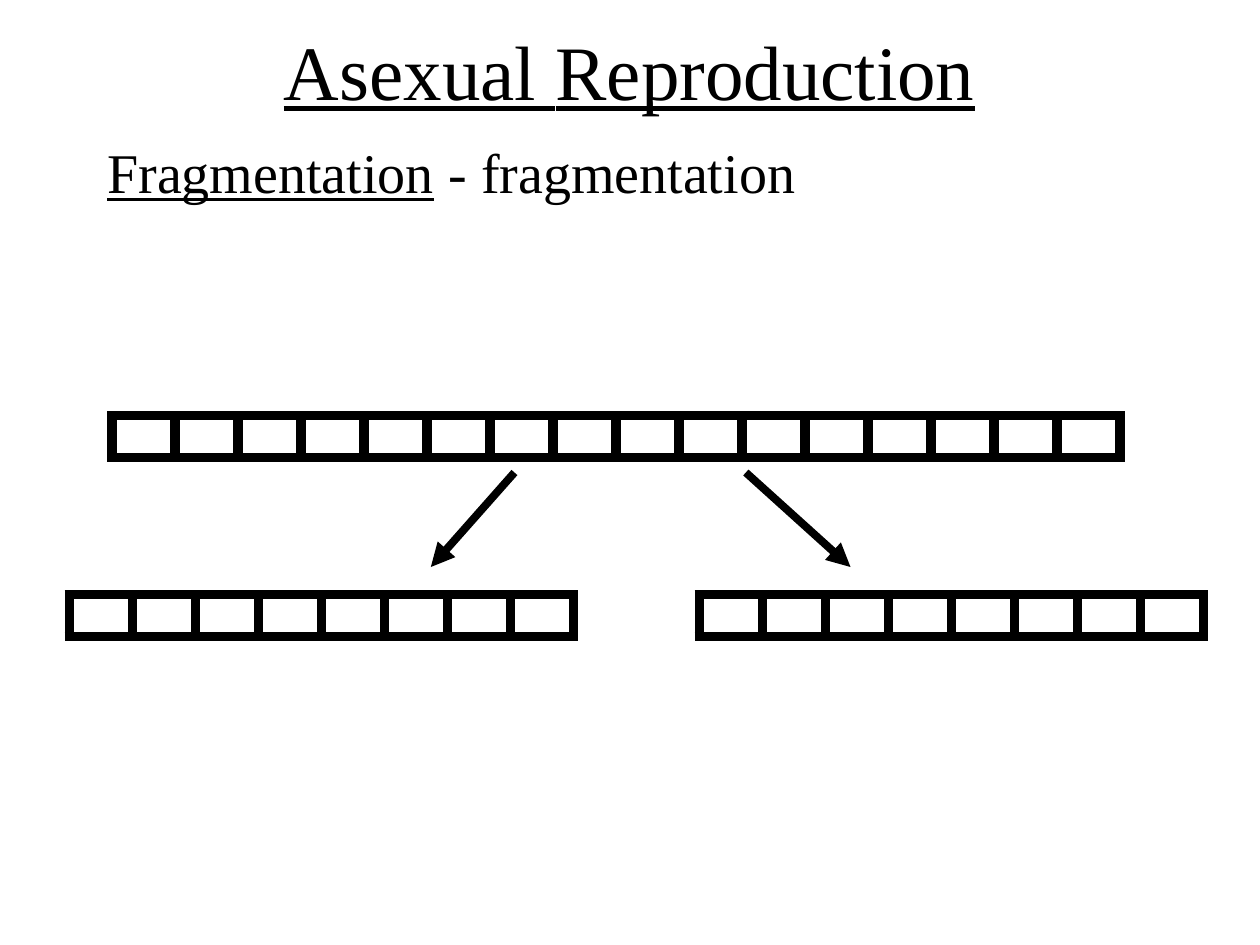
from lxml.etree import SubElement
from pptx import Presentation
from pptx.dml.color import RGBColor
from pptx.enum.shapes import MSO_CONNECTOR
from pptx.enum.text import MSO_AUTO_SIZE
from pptx.oxml import parse_xml
from pptx.oxml.ns import nsdecls, qn
from pptx.util import Pt

BLACK = RGBColor(0, 0, 0)
FONT = "Times New Roman"
SEGMENT_WIDTH, SEGMENT_HEIGHT, WALL = 36, 24, 6


class FragmentationSlide:
    def __init__(self, slide):
        self.shapes = slide.shapes

    def text(self, left, top, width, height, size, runs):
        box = self.shapes.add_textbox(Pt(left), Pt(top), Pt(width), Pt(height))
        frame = box.text_frame
        frame.word_wrap = True
        frame.auto_size = MSO_AUTO_SIZE.SHAPE_TO_FIT_TEXT
        frame.margin_left, frame.margin_top = Pt(0.9), Pt(1.7)
        frame.margin_right = frame.margin_bottom = 0
        for words, underline, spacing in runs:
            run = frame.paragraphs[0].add_run()
            run.text = words
            run.font.name = FONT
            run.font.size = Pt(size)
            run.font.color.rgb = BLACK
            run.font.underline = underline
            if spacing:
                run.font._element.set("spc", str(round(spacing * 100)))

    def organism(self, left, top, segments):
        table = self.shapes.add_table(
            1, segments, Pt(left), Pt(top),
            Pt(segments * SEGMENT_WIDTH), Pt(SEGMENT_HEIGHT)).table
        table.first_row = table.horz_banding = False
        table.rows[0].height = Pt(SEGMENT_HEIGHT)
        for column in table.columns:
            column.width = Pt(SEGMENT_WIDTH)
        for segment in table.iter_cells():
            segment.margin_left = segment.margin_right = 0
            segment.margin_top = segment.margin_bottom = 0
            properties = segment._tc.get_or_add_tcPr()
            for side in ("lnL", "lnR", "lnT", "lnB"):
                properties.append(parse_xml(
                    f'<a:{side} {nsdecls("a")} w="{Pt(WALL)}"><a:solidFill>'
                    f'<a:srgbClr val="{BLACK}"/></a:solidFill></a:{side}>'))
            segment.fill.background()

    def arrow(self, start, end):
        connector = self.shapes.add_connector(
            MSO_CONNECTOR.STRAIGHT, *map(Pt, start + end))
        connector.line.color.rgb = BLACK
        connector.line.width = Pt(4.5)
        SubElement(connector.line._get_or_add_ln(), qn("a:tailEnd"), type="triangle")
        SubElement(connector._element.spPr, qn("a:effectLst"))


def main():
    deck = Presentation()
    deck.slide_width, deck.slide_height = Pt(720), Pt(540)
    page = FragmentationSlide(deck.slides.add_slide(deck.slide_layouts[6]))

    page.text(161.3, 11.5, 397.4, 54.7, 44, [
        ("Asexual", True, 0), (" ", True, -0.7), ("Reproduction", True, 0)])
    page.text(60.5, 77, 396, 40.3, 32, [
        ("Fragmentation", True, 0), (" - fragmentation", False, 0)])

    page.organism(64, 237.6, 16)
    for fragment_left in (399.6, 39.6):
        page.organism(fragment_left, 339.8, 8)

    page.arrow((294, 270), (246.2, 324))
    page.arrow((426.2, 270), (486, 324))

    deck.save("out.pptx")


if __name__ == "__main__":
    main()
